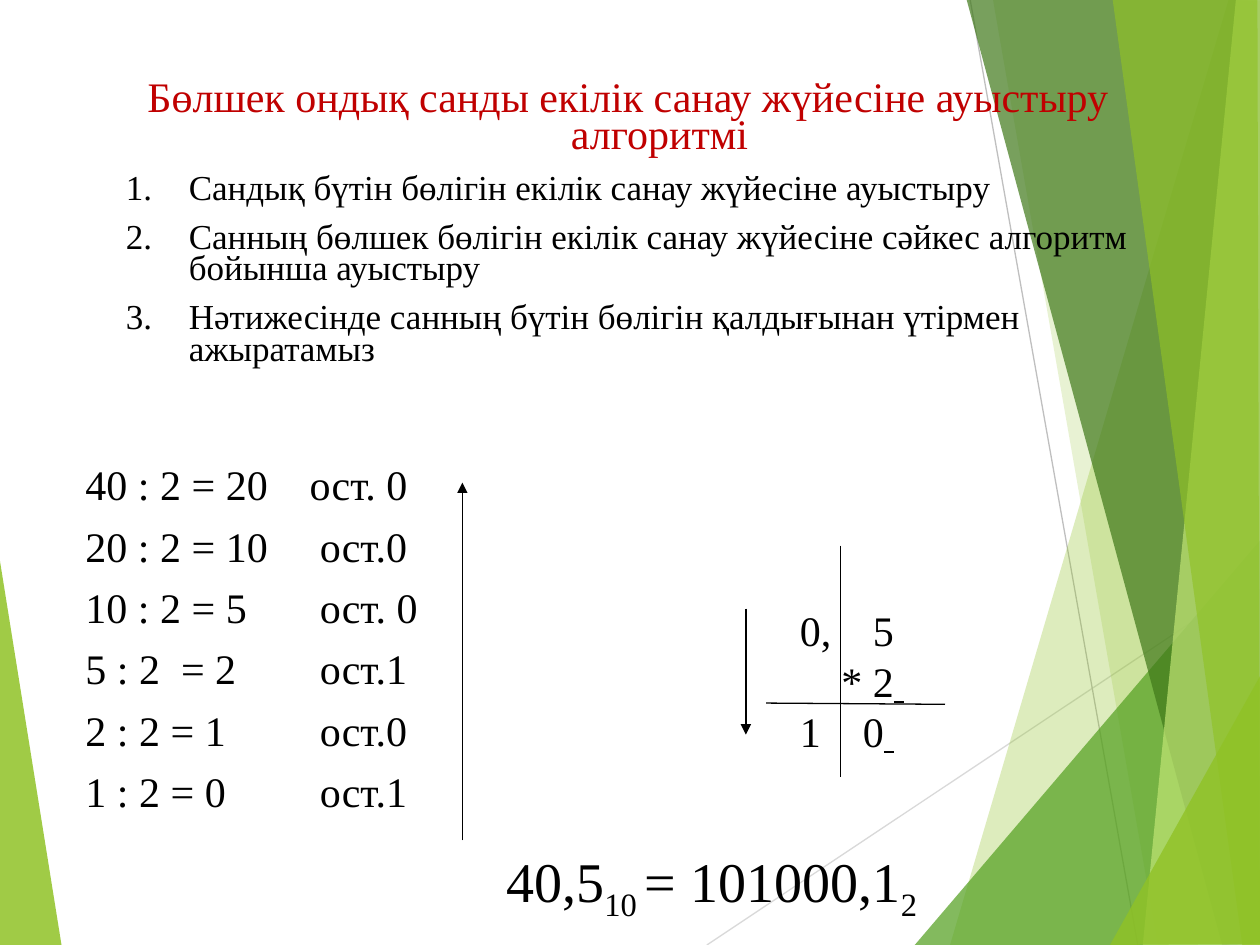
from lxml.etree import SubElement as Sub
from pptx import Presentation
from pptx.dml.color import RGBColor as RGB
from pptx.enum.shapes import MSO_CONNECTOR as Conn
from pptx.enum.text import MSO_AUTO_SIZE as Auto, PP_ALIGN as Align
from pptx.oxml.ns import qn
from pptx.util import Inches, Pt

FONT = "Times New Roman"
BLACK, RED = "000000", "C00000"

# Outline points, colour and opacity in percent
LEFT = ([(-0.01, 4.39), (0.49, 7.51), (-0.01, 7.5)], "90C226", 85)
FACETS = [
    ([(9.75, 0), (7.54, 7.5), (10.02, 7.51), (10.01, 0.01)], "90C226", 30),
    ([(7.88, -0.01), (9.19, 7.5), (10.01, 7.5), (10.01, -0.01)], "90C226", 20),
    ([(7.26, 7.5), (10, 4.29), (10.01, 7.5)], "54A021", 72),
    ([(7.67, -0.01), (9.7, 7.5), (10.01, 7.49), (10.01, -0.01)], "3F7819", 70),
    ([(9.81, -0.01), (9.07, 7.5), (10.01, 7.5), (10, -0.01)], "C0E474", 70),
    ([(8.83, -0.01), (9.86, 7.5), (10, 7.5), (9.98, -0.01)], "90C226", 65),
    ([(8.81, 7.5), (10.01, 5.35), (10.01, 7.49)], "90C226", 80),
]
HEAD = "Бөлшек ондық санды екілік санау жүйесіне ауыстыру алгоритмі"
STEPS = [
    "Сандық бүтін бөлігін екілік санау жүйесіне ауыстыру",
    "Санның бөлшек бөлігін екілік санау жүйесіне сәйкес алгоритм бойынша ауыстыру",
    "Нәтижесінде санның бүтін бөлігін қалдығынан үтірмен ажыратамыз",
]
# Division, remainder and tab place
DIVS = [
    ("40 : 2 = 20", "ост. 0", 1.78),
    ("20 : 2 = 10", "ост.0", 1.86),
    ("10 : 2 = 5", "ост. 0", 1.86),
    ("5 : 2  = 2", "ост.1", 1.86),
    ("2 : 2 = 1", "ост.0", 1.86),
    ("1 : 2 = 0", "ост.1", 1.86),
]


def color(code):
    return RGB.from_string(code)


def facet(slide, points, code, alpha):
    """Draw an outline; the builder needs whole units, so use 1/100 inch."""
    dots = [(round(x * 100), round(y * 100)) for x, y in points]
    pen = slide.shapes.build_freeform(*dots[0], scale=Inches(0.01))
    pen.add_line_segments(dots[1:], close=True)
    shape = pen.convert_to_shape()
    shape.shadow.inherit = False
    shape.line.fill.background()
    shape.fill.solid()
    shape.fill.fore_color.rgb = color(code)
    tint = shape.fill._xPr.find(qn("a:solidFill"))[0]
    Sub(tint, qn("a:alpha")).set("val", str(alpha * 1000))


def line(slide, start, end, code=BLACK, arrow=False):
    ends = [Inches(n) for n in (*start, *end)]
    link = slide.shapes.add_connector(Conn.STRAIGHT, *ends)
    link.line.color.rgb = color(code)
    link.line.width = Pt(0.75)
    props = link._element.spPr
    if arrow:
        Sub(props.find(qn("a:ln")), qn("a:tailEnd")).set("type", "triangle")
    Sub(props, qn("a:effectLst"))


def box(slide, *place):
    shape = slide.shapes.add_textbox(*[Inches(n) for n in place])
    frame = shape.text_frame
    frame.word_wrap = True
    frame.auto_size = Auto.SHAPE_TO_FIT_TEXT
    return frame


def para(frame, first=False, space=None, before=0, align=None,
         hang=0, number=False, tab=None):
    """Start a paragraph; hang and tab are in inches."""
    item = frame.paragraphs[0] if first else frame.add_paragraph()
    item.alignment = align
    item.line_spacing = space
    if before and not first:
        item.space_before = Pt(before)
    props = item._p.get_or_add_pPr()
    if hang:
        props.set("marL", str(Inches(hang)))
        props.set("indent", str(-Inches(hang)))
    if number:
        Sub(props, qn("a:buFont")).set("typeface", "+mj-lt")
        Sub(props, qn("a:buAutoNum")).set("type", "arabicPeriod")
    if tab:
        stop = Sub(Sub(props, qn("a:tabLst")), qn("a:tab"))
        stop.set("pos", str(Inches(tab)))
        stop.set("algn", "l")
    return item


def write(item, text, size=24, code=BLACK, under=False, sub=False):
    run = item.add_run()
    run.text = text
    font = run.font
    font.name, font.size = FONT, Pt(size)
    font.color.rgb = color(code)
    if under:
        font.underline = True
    if sub:
        run._r.get_or_add_rPr().set("baseline", "-25000")


def backdrop(slide):
    facet(slide, *LEFT)
    line(slide, (5.61, 7.5), (10.01, 4.57), "D9D9D9")
    line(slide, (7.7, 0), (9.03, 7.5), "BFBFBF")
    for item in FACETS:
        facet(slide, *item)


def result(slide):
    item = para(box(slide, 3.92, 6.67, 4.25, 0.63), first=True)
    for text, sub in (("40,5", False), ("10 ", True),
                      ("= 101000,1", False), ("2", True)):
        write(item, text, size=32, sub=sub)


def product(slide):
    frame = box(slide, 6.25, 4.75, 1.2, 1.7)
    write(para(frame, first=True, tab=0.58), "0,\t5")
    for text, tab in (("\t* 2", 0.33), ("1\t0", 0.5)):
        item = para(frame, tab=tab)
        write(item, text)
        write(item, " ", under=True)
    line(slide, (6.08, 5.58), (7.5, 5.59))
    line(slide, (6.67, 4.33), (6.67, 6.17))
    line(slide, (5.92, 4.83), (5.92, 5.83), arrow=True)


def division(slide):
    frame = box(slide, 0.58, 3.67, 2.92, 3.61)
    for i, (term, rest, tab) in enumerate(DIVS):
        item = para(frame, first=i == 0, space=0.8, before=12, tab=tab)
        write(item, f"{term}\t{rest}")
    line(slide, (3.67, 6.67), (3.67, 3.83), arrow=True)


def method(slide):
    frame = box(slide, 0.9, 0.6, 8.17, 2.47)
    head = para(frame, first=True, space=0.75, align=Align.CENTER, hang=0.5)
    write(head, HEAD, code=RED)
    for step in STEPS:
        item = para(frame, space=0.75, before=10, hang=0.5, number=True)
        write(item, step, size=20)


def main():
    deck = Presentation()
    deck.slide_width, deck.slide_height = Inches(10), Inches(7.5)
    slide = deck.slides.add_slide(deck.slide_layouts[6])
    backdrop(slide)
    result(slide)
    product(slide)
    division(slide)
    method(slide)
    deck.save("out.pptx")


if __name__ == "__main__":
    main()
